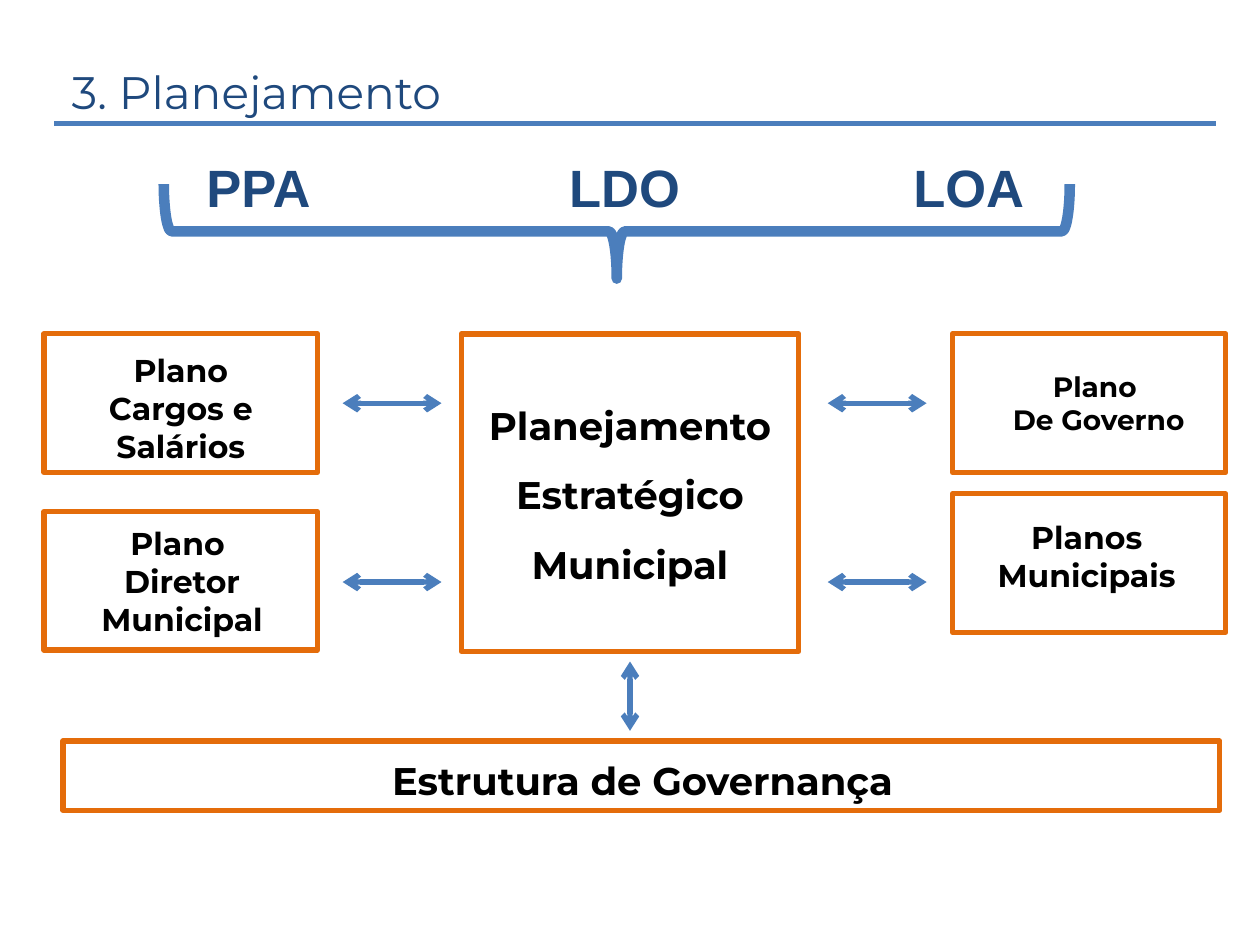
from lxml.etree import SubElement
from pptx import Presentation
from pptx.dml.color import RGBColor
from pptx.enum.shapes import MSO_CONNECTOR as Link, MSO_SHAPE as Preset
from pptx.enum.text import MSO_AUTO_SIZE as Fit, PP_ALIGN as Align
from pptx.oxml.ns import qn
from pptx.util import Pt

NAVY, BLUE, ORANGE, BLACK = "1F497D", "4B7EBC", "E46C0A", "000000"


def color(value):
    return RGBColor.from_string(value)


def points(box):
    return [Pt(length) for length in box]


def add_text(slide, box, lines, size, ink=BLACK, font="Montserrat",
             bold=True, align=Align.CENTER, spacing=None):
    frame = slide.shapes.add_textbox(*points(box)).text_frame
    frame.word_wrap = True
    frame.auto_size = Fit.SHAPE_TO_FIT_TEXT
    for index, line in enumerate(lines):
        paragraph = frame.add_paragraph() if index else frame.paragraphs[0]
        paragraph.alignment = align
        if spacing:
            paragraph.line_spacing = spacing
        run = paragraph.add_run()
        run.text = line
        run.font.size = Pt(size)
        run.font.name = font
        run.font.bold = bold
        run.font.color.rgb = color(ink)


def add_outline(slide, preset, box, ink, width):
    outline = slide.shapes.add_shape(preset, *points(box))
    outline.shadow.inherit = False
    outline.fill.background()
    outline.line.color.rgb = color(ink)
    outline.line.width = Pt(width)
    return outline


def add_rule(slide, ends, arrows=False):
    rule = slide.shapes.add_connector(Link.STRAIGHT, *points(ends))
    rule.line.color.rgb = color(BLUE)
    rule.line.width = Pt(3)
    if arrows:
        stroke = rule.line._get_or_add_ln()
        for end in ("a:headEnd", "a:tailEnd"):
            SubElement(stroke, qn(end), type="arrow")
    SubElement(rule._element.spPr, qn("a:effectLst"))


def add_header(slide, left, top, width, height):
    add_text(slide, (left + 2.9, top, 576.7, height), ["3. Planejamento"], 26,
             NAVY, bold=False, align=Align.LEFT)
    rule_y = top + 37.5
    add_rule(slide, (left, rule_y, left + width, rule_y))


def add_budget_laws(slide, left, top, width, height):
    laws = [("PPA", 17.3, 133.2), ("LDO", 224.6, 101.5), ("LOA", 421.2, 133.2)]
    for law, offset, law_width in laws:
        add_text(slide, (left + offset, top, law_width, 43.9), [law], 30,
                 NAVY, font="Arial", align=Align.LEFT)
    depth = 54
    middle_x, middle_y = left + width / 2, top + height - depth / 2
    brace = add_outline(
        slide, Preset.LEFT_BRACE,
        (middle_x - depth / 2, middle_y - width / 2, depth, width), BLUE, 6)
    brace.rotation = 270


def add_plan(slide, box, text_box, lines, size, spacing=None):
    add_outline(slide, Preset.RECTANGLE, box, ORANGE, 3)
    add_text(slide, text_box, lines, size, spacing=spacing)


def add_plans(slide, left, top, width, height):
    plan_width, plan_height = 156.2, 79.2
    right = left + width - plan_width
    plans = [
        (left, top, (31.7, 197.3, 143.3, 72.7),
         ["Plano", "Cargos e", "Salários"], 18),
        (left, top + 101.5, (32.4, 295.9, 143.3, 72.7),
         ["Plano ", "Diretor", "Municipal"], 18),
        (right, top, (540, 207.4, 175.7, 46.1), ["Plano ", "De Governo"], 16),
        (right, top + 91.4, (541.4, 292.3, 159.1, 51.1),
         ["Planos Municipais"], 18),
    ]
    for x, y, text_box, lines, size in plans:
        add_plan(slide, (x, y, plan_width, plan_height), text_box, lines, size)
    add_plan(slide, (left + 238.3, top, 193, height),
             (269.3, 213.1, 181.4, 127.4),
             ["Planejamento", "Estratégico", "Municipal"], 22, 1.5)
    for x in (left + 170.6, left + 447.8):
        for y in (top + 39.6, top + 141.8):
            add_rule(slide, (x, y, x + 56.5, y), arrows=True)


def add_governance(slide, left, top, width, height):
    add_rule(slide, (360, top - 45.4, 360, top - 5.8), arrows=True)
    add_plan(slide, (left, top, width, height),
             (left + 3.6, top + 5.8, 655.2, 33.8),
             ["Estrutura de Governança"], 22)


def main():
    deck = Presentation()
    deck.slide_width, deck.slide_height = Pt(720), Pt(540)
    slide = deck.slides.add_slide(deck.slide_layouts[6])
    add_header(slide, 31, 33.1, 663.8, 38.9)
    add_budget_laws(slide, 93.6, 85, 517.7, 74.2)
    add_plans(slide, 25.2, 190.8, 675.3, 181.4)
    add_governance(slide, 36, 423.4, 661, 39.6)
    deck.save("out.pptx")


if __name__ == "__main__":
    main()
